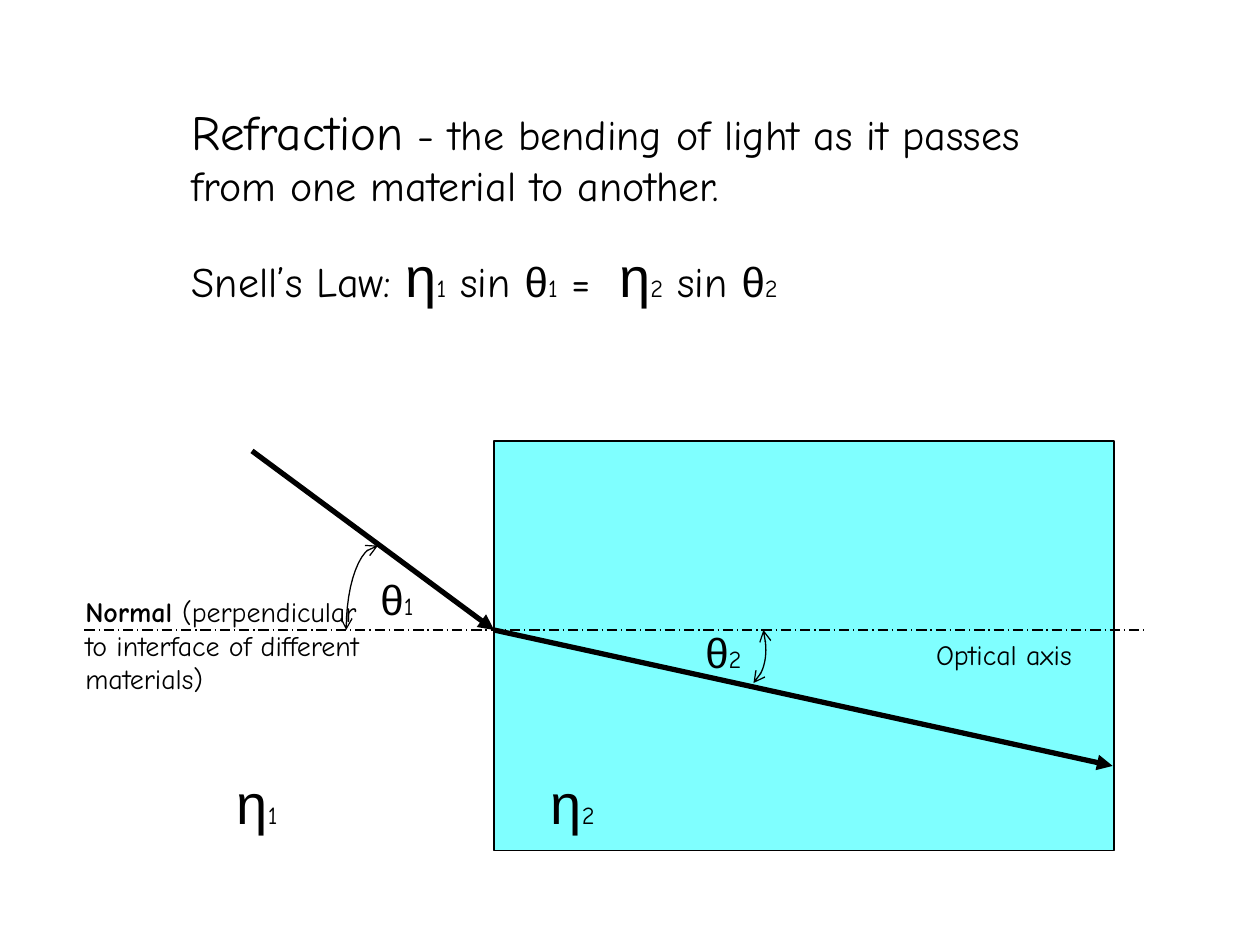
from dataclasses import dataclass

from lxml.etree import SubElement
from pptx import Presentation
from pptx.dml.color import RGBColor
from pptx.enum.dml import MSO_LINE_DASH_STYLE as Dash
from pptx.enum.shapes import MSO_CONNECTOR as Connector, MSO_SHAPE as Shape
from pptx.enum.text import MSO_ANCHOR as Anchor, MSO_AUTO_SIZE as AutoSize, PP_ALIGN as Align
from pptx.oxml.ns import qn
from pptx.util import Cm, Pt


@dataclass(frozen=True)
class Theme:
    ink: RGBColor = RGBColor(0, 0, 0)
    glass: RGBColor = RGBColor(0, 255, 255)
    glass_alpha: int = 50
    text_font: str = "Comic Neue"
    greek_font: str = "Arial"
    heading: int = 28
    body: int = 24
    index_symbol: int = 32
    angle_symbol: int = 24
    label: int = 16
    subscript: int = 14
    thin: float = 0.75
    ray: float = 3


class Diagram:
    def __init__(self, slide, theme):
        self.slide = slide
        self.theme = theme

    def run(self, paragraph, text, size, font=None, bold=False):
        run = paragraph.add_run()
        run.text = text
        run.font.size = Pt(size)
        run.font.name = font or self.theme.text_font
        run.font.bold = bold
        run.font.color.rgb = self.theme.ink

    def symbol(self, paragraph, letter, number):
        size = self.theme.index_symbol if letter == "η" else self.theme.angle_symbol
        self.run(paragraph, letter, size, self.theme.greek_font)
        self.run(paragraph, number, self.theme.subscript)

    def title(self, left, top, width, height):
        title = self.slide.shapes.title
        title.left, title.top, title.width, title.height = map(Cm, (left, top, width, height))
        frame = title.text_frame
        frame.vertical_anchor = Anchor.TOP
        frame.auto_size = AutoSize.NONE
        frame.word_wrap = True
        return frame

    def textbox(self, left, top, width, height, wrap=True):
        box = self.slide.shapes.add_textbox(Cm(left), Cm(top), Cm(width), Cm(height))
        box.text_frame.word_wrap = wrap
        box.text_frame.auto_size = AutoSize.SHAPE_TO_FIT_TEXT
        return box.text_frame.paragraphs[0]

    def symbol_label(self, letter, number, left, top, width, height):
        self.symbol(self.textbox(left, top, width, height, wrap=False), letter, number)

    def block(self, left, top, width, height):
        block = self.slide.shapes.add_shape(
            Shape.RECTANGLE, Cm(left), Cm(top), Cm(width), Cm(height))
        block.shadow.inherit = False
        block.fill.solid()
        block.fill.fore_color.rgb = self.theme.glass
        colour = block.fill._xPr.find(".//" + qn("a:srgbClr"))
        SubElement(colour, qn("a:alpha"), val=str(self.theme.glass_alpha * 1000))
        self.outline(block, self.theme.thin)

    def outline(self, shape, width, head=None, tail=None):
        shape.line.color.rgb = self.theme.ink
        shape.line.width = Pt(width)
        for end, kind in (("a:headEnd", head), ("a:tailEnd", tail)):
            if kind:
                SubElement(shape.line._get_or_add_ln(), qn(end), type=kind)

    def line(self, start, end, width, tail=None, dash=None):
        line = self.slide.shapes.add_connector(
            Connector.STRAIGHT, *map(Cm, (*start, *end)))
        if dash:
            line.line.dash_style = dash
        self.outline(line, width, tail=tail)
        SubElement(line._element.spPr, qn("a:effectLst"))

    def angle_arc(self, start, *curves, steps=12):
        """Trace cubic curves, each given as two control points and an end."""
        points, current = [], start
        for control_1, control_2, end in curves:
            for step in range(1, steps + 1):
                t = step / steps
                weights = ((1 - t) ** 3, 3 * t * (1 - t) ** 2, 3 * t * t * (1 - t), t ** 3)
                corners = (current, control_1, control_2, end)
                points.append(tuple(
                    Cm(sum(w * corner[axis] for w, corner in zip(weights, corners)))
                    for axis in (0, 1)))
            current = end
        builder = self.slide.shapes.build_freeform(Cm(start[0]), Cm(start[1]))
        builder.add_line_segments(points, close=False)
        arc = builder.convert_to_shape()
        arc.shadow.inherit = False
        arc.fill.background()
        self.outline(arc, self.theme.thin, head="arrow", tail="arrow")


def main():
    prs = Presentation()
    prs.slide_width, prs.slide_height = Cm(25.4), Cm(19.05)
    theme = Theme()
    diagram = Diagram(prs.slides.add_slide(prs.slide_layouts[5]), theme)

    # Definition and Snell's law
    frame = diagram.title(3.61, 1.91, 18.21, 7.8)
    definition, law = frame.paragraphs[0], frame.add_paragraph()
    definition.alignment = law.alignment = Align.LEFT
    law.space_before = Pt(18)
    diagram.run(definition, "Refraction", theme.heading)
    diagram.run(definition, " - the bending of light as it passes from one material to another.",
                theme.body)
    for lead, number in (("Snell’s Law: ", "1"), (" =  ", "2")):
        diagram.run(law, lead, theme.body)
        diagram.symbol(law, "η", number)
        diagram.run(law, " sin ", theme.body)
        diagram.symbol(law, "θ", number)

    # Second material
    diagram.block(9.96, 8.89, 12.5, 8.26)

    # Refractive indices and angles
    diagram.symbol_label("η", "1", 4.52, 15.37, 1.42, 1.6)
    diagram.symbol_label("θ", "1", 7.42, 11.43, 1.17, 1.27)
    diagram.symbol_label("θ", "2", 13.97, 12.5, 1.24, 1.27)
    diagram.symbol_label("η", "2", 10.85, 15.37, 1.5, 1.6)
    diagram.run(diagram.textbox(18.62, 12.73, 5.28, 1.04), "Optical axis", theme.label)

    # Incident ray, angle arcs and optical axis
    axis_y = 12.7
    entry = (9.96, axis_y)
    diagram.line((5.08, 9.09), entry, theme.ray, tail="triangle")
    diagram.angle_arc((7.62, 11), ((7.26, 11), (6.98, 11.76), (6.98, axis_y)))
    diagram.angle_arc((15.39, axis_y),
                      ((15.42, 12.83), (15.44, 12.97), (15.44, 13.11)),
                      ((15.44, 13.39), (15.34, 13.64), (15.19, 13.77)))
    diagram.line((1.7, axis_y), (23.06, axis_y), theme.thin, dash=Dash.LONG_DASH_DOT)

    # Explanation of the normal
    normal = diagram.textbox(1.47, 11.86, 6.15, 2.97)
    diagram.run(normal, "Normal ", theme.label, bold=True)
    diagram.run(normal, "(perpendicular to interface of different materials)", theme.label)

    # Refracted ray
    diagram.line(entry, (22.43, 15.44), theme.ray, tail="triangle")

    prs.save("out.pptx")


if __name__ == "__main__":
    main()
